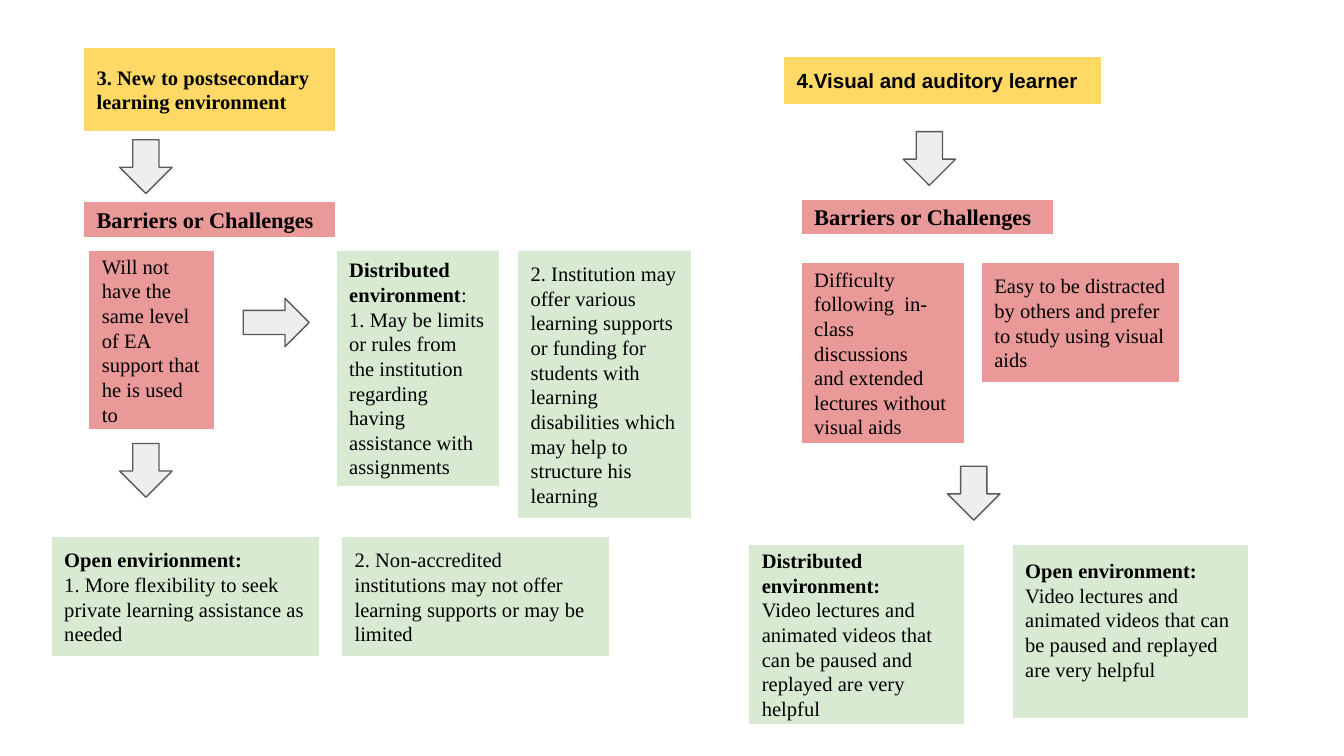
from dataclasses import dataclass

from pptx import Presentation
from pptx.dml.color import RGBColor
from pptx.enum.shapes import MSO_SHAPE
from pptx.enum.text import MSO_ANCHOR, PP_ALIGN
from pptx.shapes.autoshape import Shape
from pptx.slide import Slide
from pptx.util import Inches, Pt

YELLOW = RGBColor(0xFF, 0xD9, 0x66)
RED = RGBColor(0xEA, 0x99, 0x99)
GREEN = RGBColor(0xD9, 0xEA, 0xD3)
GRAY = RGBColor(0xEE, 0xEE, 0xEE)
DARK_GRAY = RGBColor(0x59, 0x59, 0x59)
WHITE = RGBColor(0xFF, 0xFF, 0xFF)
BLACK = RGBColor(0x00, 0x00, 0x00)

SLIDE_WIDTH = Inches(10)
SLIDE_HEIGHT = SLIDE_WIDTH * 9 // 16
SERIF = "Times New Roman"
INSET = 0.1
DOWN_SIZE = (0.39, 0.4)
RIGHT_SIZE = (0.49, 0.36)
BARRIERS = "Barriers or Challenges"
VIDEO_HELP = (
    "Video lectures and animated videos that can be paused "
    "and replayed are very helpful"
)


@dataclass(frozen=True)
class Box:
    left: float
    top: float
    width: float
    height: float
    fill: RGBColor
    heading: str = ""
    heading_end: str = ""
    body: tuple[str, ...] = ()
    size: int = 11
    font: str = SERIF
    bottom_inset: float = INSET


@dataclass(frozen=True)
class Arrow:
    kind: MSO_SHAPE
    left: float
    top: float
    size: tuple[float, float] = DOWN_SIZE


BOXES = (
    Box(5.96, 1.95, 1.22, 1.35, RED,
        body=("Difficulty following  in-class discussions",
              "and extended lectures without visual aids")),
    Box(7.3, 1.95, 1.48, 0.9, RED,
        body=("Easy to be distracted by others and prefer to study using visual aids",)),
    Box(3.85, 1.86, 1.3, 2, GREEN,
        body=("2. Institution may offer various learning supports or funding for "
              "students with learning disabilities which may help to structure "
              "his learning",)),
    Box(2.5, 1.86, 1.22, 1.76, GREEN, "Distributed environment", ":",
        ("1. May be limits or rules from the institution regarding "
         "having assistance with assignments",)),
    Box(0.66, 1.86, 0.94, 1.34, RED,
        body=("Will not have the same level of EA support that he is used to",)),
    Box(0.62, 0.35, 1.88, 0.63, YELLOW, "3. New to postsecondary learning environment"),
    Box(5.83, 0.42, 2.37, 0.36, YELLOW, "4.Visual and auditory learner", font="Arial"),
    Box(5.96, 1.48, 1.88, 0.27, RED, BARRIERS, size=12),
    Box(0.62, 1.5, 1.88, 0.27, RED, BARRIERS, size=12),
    Box(0.38, 3.99, 2, 0.9, GREEN, "Open envirionment:",
        body=("1. More flexibility to seek private learning assistance as needed",)),
    Box(2.54, 3.99, 2, 0.9, GREEN,
        body=("2. Non-accredited institutions may not offer learning supports "
              "or may be limited",)),
    Box(5.57, 4.05, 1.61, 1.34, GREEN, "Distributed environment:", body=(VIDEO_HELP,)),
    Box(7.53, 4.05, 1.76, 1.3, GREEN, "Open environment:", body=(VIDEO_HELP,),
        bottom_inset=0.28),
)

ARROWS = (
    Arrow(MSO_SHAPE.DOWN_ARROW, 0.89, 1.04),
    Arrow(MSO_SHAPE.DOWN_ARROW, 6.72, 0.98),
    Arrow(MSO_SHAPE.DOWN_ARROW, 7.05, 3.47),
    Arrow(MSO_SHAPE.RIGHT_ARROW, 1.81, 2.22, RIGHT_SIZE),
    Arrow(MSO_SHAPE.DOWN_ARROW, 0.89, 3.3),
)


def add_filled_shape(
    slide: Slide,
    kind: MSO_SHAPE,
    bounds: tuple[float, float, float, float],
    fill: RGBColor,
    line: RGBColor,
) -> Shape:
    shape = slide.shapes.add_shape(kind, *(Inches(value) for value in bounds))
    shape.shadow.inherit = False
    shape.fill.solid()
    shape.fill.fore_color.rgb = fill
    shape.line.color.rgb = line
    shape.line.width = Pt(0.75)
    return shape


def draw_box(slide: Slide, box: Box) -> None:
    bounds = (box.left, box.top, box.width, box.height)
    shape = add_filled_shape(slide, MSO_SHAPE.RECTANGLE, bounds, box.fill, WHITE)
    text_frame = shape.text_frame
    text_frame.word_wrap = True
    text_frame.vertical_anchor = MSO_ANCHOR.MIDDLE
    text_frame.margin_left = text_frame.margin_right = Inches(INSET)
    text_frame.margin_top = Inches(INSET)
    text_frame.margin_bottom = Inches(box.bottom_inset)

    heading_lines = (box.heading,) if box.heading else ()
    text_frame.text = "\n".join(heading_lines + box.body)
    first_paragraph = text_frame.paragraphs[0]
    if box.heading:
        first_paragraph.runs[0].font.bold = True
    if box.heading_end:
        first_paragraph.add_run().text = box.heading_end

    for paragraph in text_frame.paragraphs:
        paragraph.alignment = PP_ALIGN.LEFT
        for run in paragraph.runs:
            run.font.name = box.font
            run.font.size = Pt(box.size)
            run.font.color.rgb = BLACK


def draw_arrow(slide: Slide, arrow: Arrow) -> None:
    bounds = (arrow.left, arrow.top, *arrow.size)
    add_filled_shape(slide, arrow.kind, bounds, GRAY, DARK_GRAY)


def main() -> None:
    presentation = Presentation()
    presentation.slide_width = SLIDE_WIDTH
    presentation.slide_height = SLIDE_HEIGHT
    slide = presentation.slides.add_slide(presentation.slide_layouts[6])
    for box in BOXES:
        draw_box(slide, box)
    for arrow in ARROWS:
        draw_arrow(slide, arrow)
    presentation.save("out.pptx")


if __name__ == "__main__":
    main()
